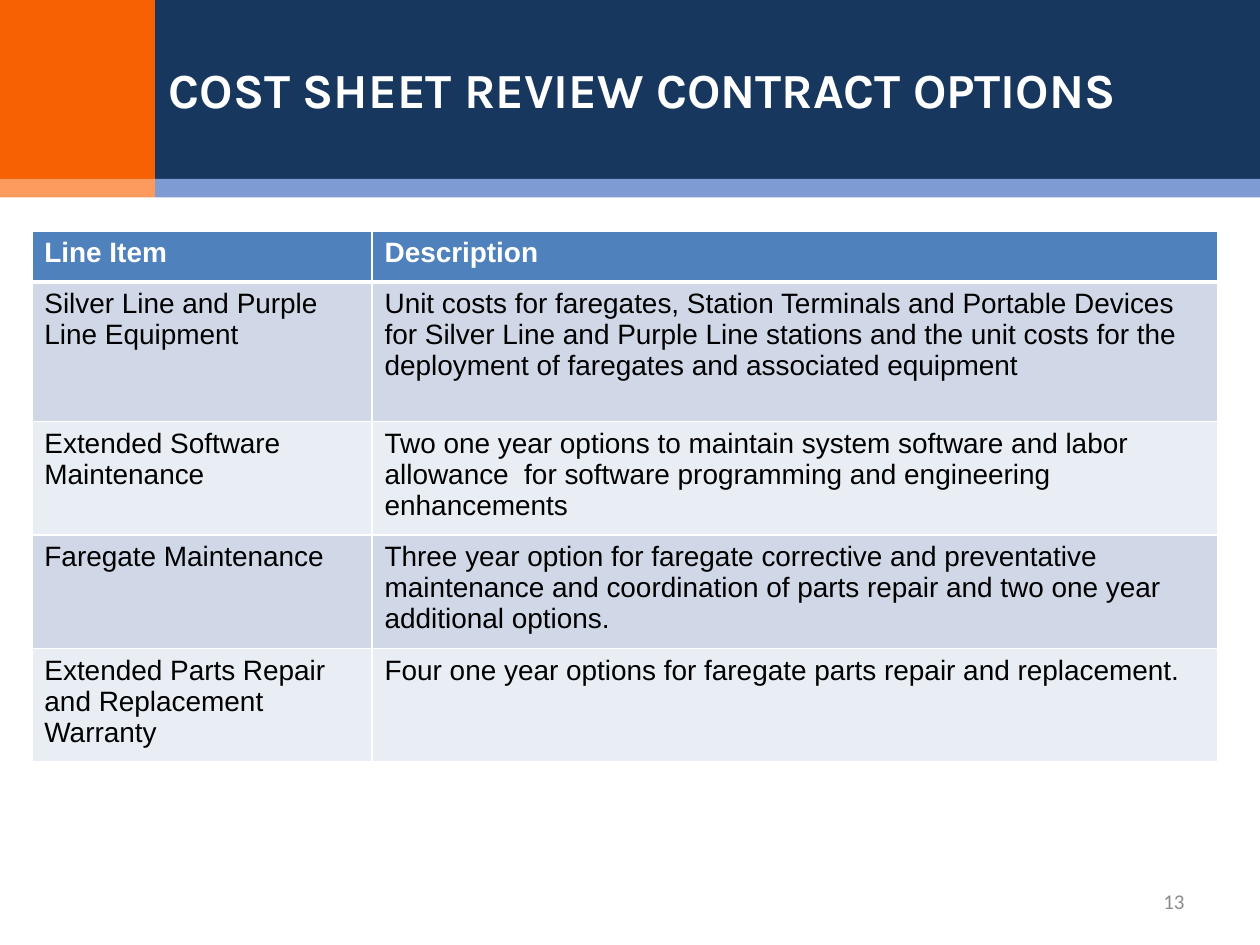
from lxml import etree
from pptx import Presentation
from pptx.dml.color import RGBColor
from pptx.enum.shapes import MSO_SHAPE
from pptx.enum.text import MSO_ANCHOR, MSO_AUTO_SIZE, PP_ALIGN
from pptx.oxml.ns import qn
from pptx.util import Pt

RECTANGLE = MSO_SHAPE.RECTANGLE
MIDDLE = MSO_ANCHOR.MIDDLE
NO_FIT = MSO_AUTO_SIZE.NONE
JUSTIFY, RIGHT = PP_ALIGN.JUSTIFY, PP_ALIGN.RIGHT

NAVY = RGBColor(0x17, 0x37, 0x5E)
ORANGE = RGBColor(0xF7, 0x60, 0x03)
PERIWINKLE = RGBColor(0x7F, 0x9B, 0xD3)
PEACH = RGBColor(0xFD, 0x9A, 0x5D)
HEADER_BLUE = RGBColor(0x4F, 0x81, 0xBD)
BAND_DARK = RGBColor(0xD0, 0xD8, 0xE8)
BAND_LIGHT = RGBColor(0xE9, 0xED, 0xF4)
GRAY = RGBColor(0x8C, 0x8C, 0x8C)
WHITE = RGBColor(0xFF, 0xFF, 0xFF)
BLACK = RGBColor(0, 0, 0)

PAGE_WIDTH, PAGE_HEIGHT = 720, 540
COLUMN_WIDTHS = (194.4, 483.1)
ROW_HEIGHTS = (29.2, 79.8, 60.5, 60.5, 60.5)
ROWS = (
    ("Line Item", "Description"),
    ("Silver Line and Purple Line Equipment",
     "Unit costs for faregates, Station Terminals and Portable Devices for Silver Line "
     "and Purple Line stations and the unit costs for the deployment of faregates and "
     "associated equipment"),
    ("Extended Software Maintenance",
     "Two one year options to maintain system software and labor allowance  for software "
     "programming and engineering enhancements"),
    ("Faregate Maintenance",
     "Three year option for faregate corrective and preventative maintenance and "
     "coordination of parts repair and two one year additional options."),
    ("Extended Parts Repair and Replacement Warranty",
     "Four one year options for faregate parts repair and replacement."),
)


def style_font(para, name, size, color, bold=False):
    """Set the font of a whole paragraph."""
    font = para.font
    font.name, font.size, font.bold = name, Pt(size), bold
    font.color.rgb = color


def add_band(page, left, top, width, height, color):
    """Add a plain filled rectangle."""
    band = page.shapes.add_shape(RECTANGLE, Pt(left), Pt(top), Pt(width), Pt(height))
    band.shadow.inherit = False
    band.fill.solid()
    band.fill.fore_color.rgb = color
    band.line.fill.background()


def add_header(page, left, top, width, height):
    """Build the coloured header bands with the title over them."""
    accent, strip = 88.6, 10.6
    main = height - strip
    add_band(page, left + accent, top, width - accent, main, NAVY)
    add_band(page, left, top, accent, main, ORANGE)
    add_band(page, left + accent, top + main, width - accent, strip, PERIWINKLE)
    add_band(page, left, top + main, accent, strip, PEACH)

    title = page.shapes.title
    page.shapes._spTree.append(title._element)
    title.left, title.top = Pt(left + accent + 0.6), Pt(top)
    title.width, title.height = Pt(width - accent - 0.6), Pt(main)
    frame = title.text_frame
    frame.text = "COST SHEET REVIEW CONTRACT OPTIONS"
    frame.vertical_anchor = MIDDLE
    frame.auto_size = NO_FIT
    para = frame.paragraphs[0]
    para.alignment = JUSTIFY
    style_font(para, "Karla", 28, WHITE, True)


def set_border(cell, side, width):
    """Draw one white border of a table cell."""
    line = etree.SubElement(cell._tc.get_or_add_tcPr(), qn(f"a:ln{side}"), w=str(Pt(width)))
    fill = etree.SubElement(line, qn("a:solidFill"))
    etree.SubElement(fill, qn("a:srgbClr"), val=str(WHITE))


def add_options_table(page, left, top, width, height):
    """Build the table of contract options."""
    table = page.shapes.add_table(
        len(ROWS), len(COLUMN_WIDTHS), Pt(left), Pt(top), Pt(width), Pt(height)).table
    for column, column_width in zip(table.columns, COLUMN_WIDTHS):
        column.width = Pt(column_width)
    for row_index, texts in enumerate(ROWS):
        table.rows[row_index].height = Pt(ROW_HEIGHTS[row_index])
        is_header = row_index == 0
        band_color = BAND_DARK if row_index % 2 else BAND_LIGHT
        for column_index, text in enumerate(texts):
            cell = table.cell(row_index, column_index)
            for side in "LRTB":
                thick = (side == "B" and is_header) or (side == "T" and row_index == 1)
                set_border(cell, side, 3 if thick else 1)
            cell.fill.solid()
            cell.fill.fore_color.rgb = HEADER_BLUE if is_header else band_color
            cell.text = text
            style_font(cell.text_frame.paragraphs[0], "Arial", 16,
                       WHITE if is_header else BLACK, is_header)


def add_page_number(page, left, top, width, height):
    """Place the page number at the lower right."""
    box = page.shapes.add_textbox(Pt(left), Pt(top), Pt(width), Pt(height))
    frame = box.text_frame
    frame.word_wrap = True
    frame.vertical_anchor = MIDDLE
    para = frame.paragraphs[0]
    para.text = "13"
    para.alignment = RIGHT
    style_font(para, "Calibri", 12, GRAY)


def main():
    """Build the deck and save it."""
    deck = Presentation()
    deck.slide_width, deck.slide_height = Pt(PAGE_WIDTH), Pt(PAGE_HEIGHT)
    page = deck.slides.add_slide(deck.slide_layouts[5])
    add_header(page, 0, 0, PAGE_WIDTH, 112.8)
    add_page_number(page, 516, 500.5, 168, 28.8)
    add_options_table(page, 18.2, 132, sum(COLUMN_WIDTHS), sum(ROW_HEIGHTS))
    deck.save("out.pptx")


if __name__ == "__main__":
    main()
